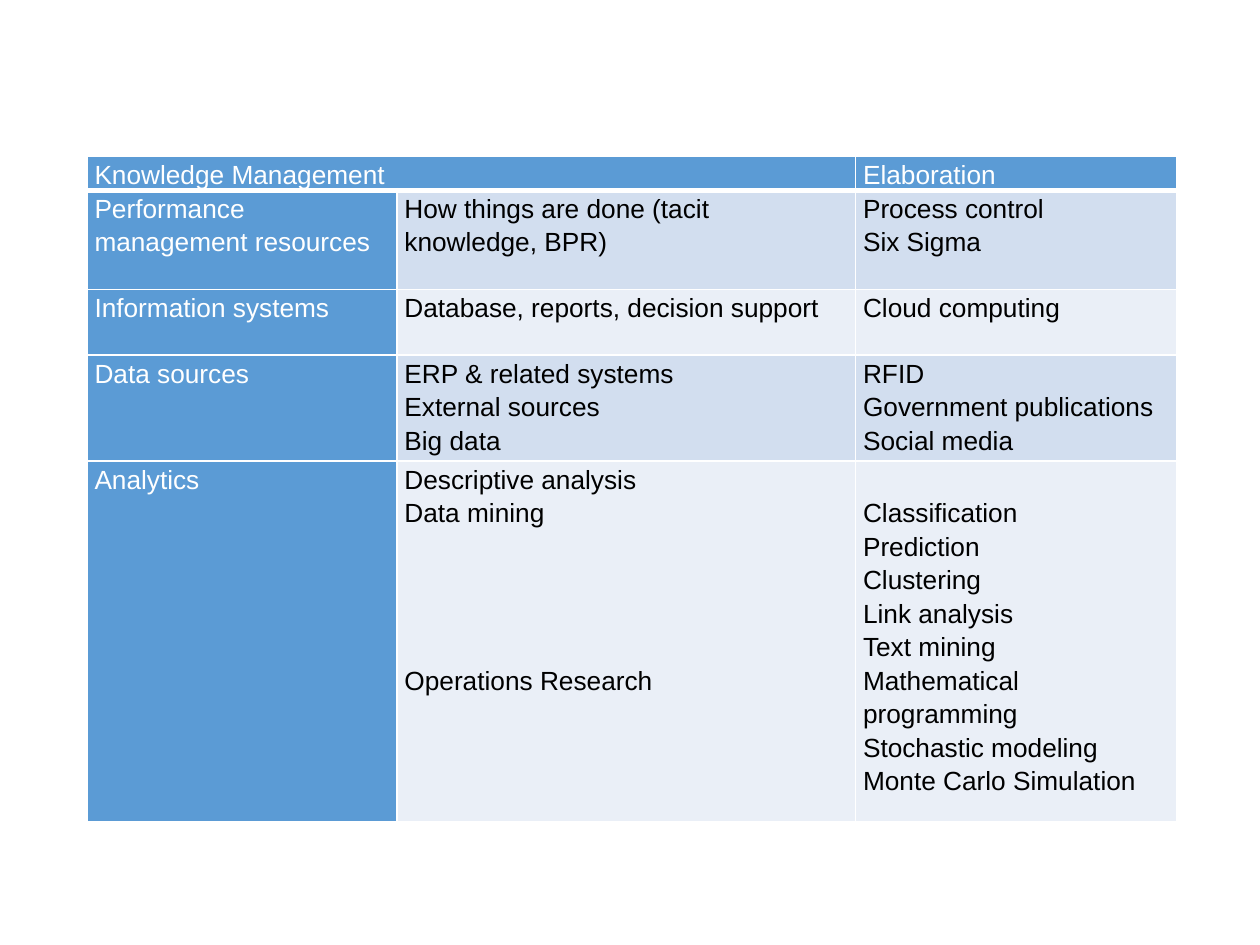
from lxml.etree import SubElement
from pptx import Presentation
from pptx.dml.color import RGBColor as Rgb
from pptx.oxml.ns import qn
from pptx.util import Inches, Pt

COLORS = {"accent": "5B9BD5", "band": "D2DEEF", "pale": "EAEFF7", "white": "FFFFFF", "black": "000000"}
LINE_HEIGHT = 19.2
COLUMN_WIDTHS = [2.46, 3.64, 2.55]
ROW_HEIGHTS = [0.27, 0.79, 0.52, 0.84, 2.86]
HEADINGS = ["Knowledge Management", "", "Elaboration"]
TOPICS = [
    ("Performance management resources",
     ["How things are done (tacit knowledge, BPR)"],
     ["Process control", "Six Sigma"]),
    ("Information systems",
     ["Database, reports, decision support"],
     ["Cloud computing"]),
    ("Data sources",
     ["ERP & related systems", "External sources", "Big data"],
     ["RFID", "Government publications", "Social media"]),
    ("Analytics",
     ["Descriptive analysis", "Data mining", "Operations Research"],
     ["Classification", "Prediction", "Clustering", "Link analysis", "Text mining",
      "Mathematical programming", "Stochastic modeling", "Monte Carlo Simulation"]),
]


class SlideBuilder:
    """Holds the text style and the current slide, and draws tables on it."""

    def __init__(self, slide, font="Arial", size=15):
        self.slide, self.font, self.size = slide, font, size

    def table(self, left, top, widths, heights):
        frame = self.slide.shapes.add_table(
            len(heights), len(widths), Inches(left), Inches(top),
            Inches(sum(widths)), Inches(sum(heights)))
        for column, width in zip(frame.table.columns, widths):
            column.width = Inches(width)
        for row, height in zip(frame.table.rows, heights):
            row.height = Inches(height)
        return frame.table

    def borders(self, cell, bottom):
        properties = cell._tc.get_or_add_tcPr()
        for position, (side, width) in enumerate(
                [("lnL", 1), ("lnR", 1), ("lnT", 1), ("lnB", bottom)]):
            line = SubElement(properties, qn(f"a:{side}"), w=str(Pt(width)))
            fill = SubElement(line, qn("a:solidFill"))
            SubElement(fill, qn("a:srgbClr"), val=COLORS["white"])
            properties.insert(position, line)

    def cell(self, cell, lines, fill, color, bottom=1):
        cell.margin_left = cell.margin_right = Inches(0.06)
        cell.margin_top = cell.margin_bottom = 0
        cell.fill.solid()
        cell.fill.fore_color.rgb = Rgb.from_string(COLORS[fill])
        self.borders(cell, bottom)
        for index, line in enumerate(lines):
            paragraphs = cell.text_frame
            paragraph = paragraphs.add_paragraph() if index else paragraphs.paragraphs[0]
            paragraph.line_spacing = 1.15
            run = paragraph.add_run()
            run.text = line
            run.font.name, run.font.size = self.font, Pt(self.size)
            run.font.color.rgb = Rgb.from_string(COLORS[color])


def main():
    deck = Presentation()
    deck.slide_width, deck.slide_height = Inches(10), Inches(7.5)
    builder = SlideBuilder(deck.slides.add_slide(deck.slide_layouts[6]))
    knowledge = builder.table(0.69, 1.24, COLUMN_WIDTHS, ROW_HEIGHTS)

    for column, heading in enumerate(HEADINGS):
        builder.cell(knowledge.cell(0, column), [heading] if heading else [], "accent", "white", bottom=3)
    knowledge.cell(0, 0).merge(knowledge.cell(0, 1))

    for row, (topic, methods, elaboration) in enumerate(TOPICS, start=1):
        shade = "band" if row % 2 else "pale"
        builder.cell(knowledge.cell(row, 0), [topic], "accent", "white")
        builder.cell(knowledge.cell(row, 1), methods, shade, "black")
        builder.cell(knowledge.cell(row, 2), elaboration, shade, "black")

    analytics = len(TOPICS)
    research = knowledge.cell(analytics, 1).text_frame.paragraphs[-1]
    research.space_before = Pt(4 * LINE_HEIGHT)
    knowledge.cell(analytics, 2).margin_top = Pt(LINE_HEIGHT)
    deck.save("out.pptx")


if __name__ == "__main__":
    main()
